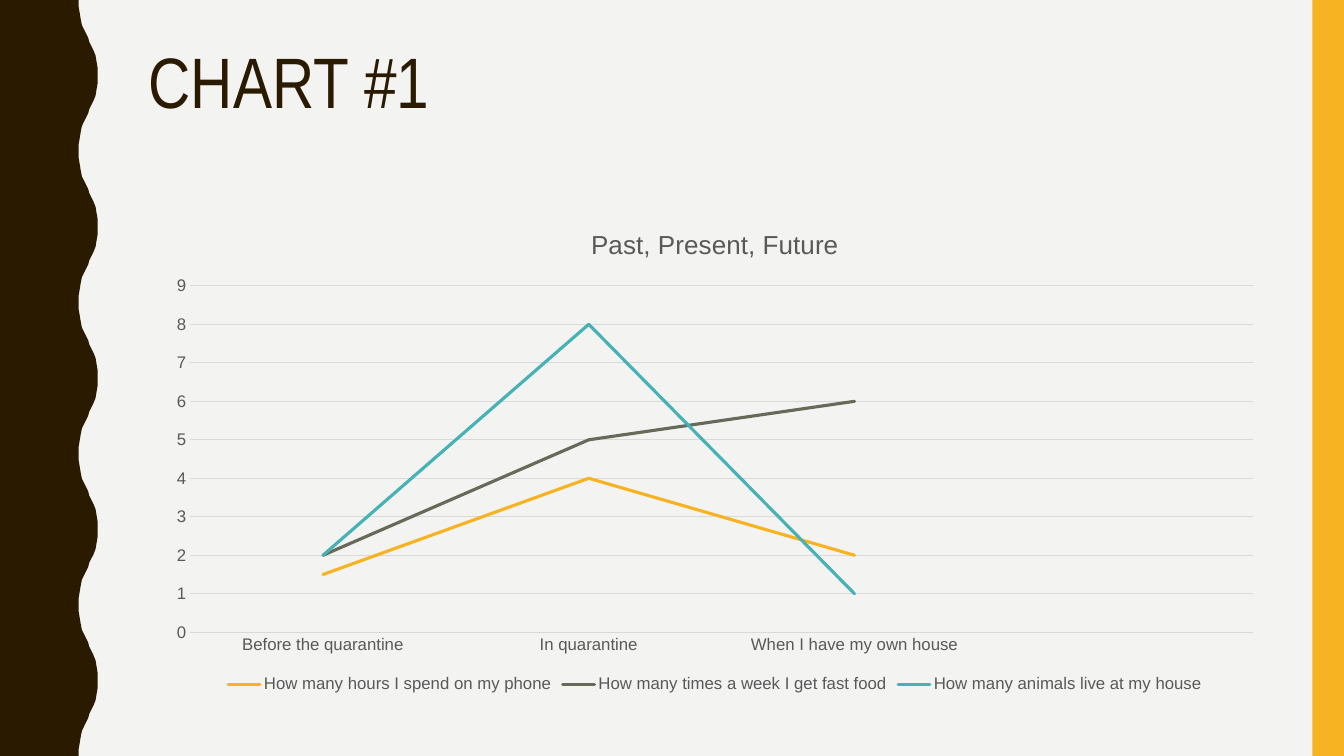
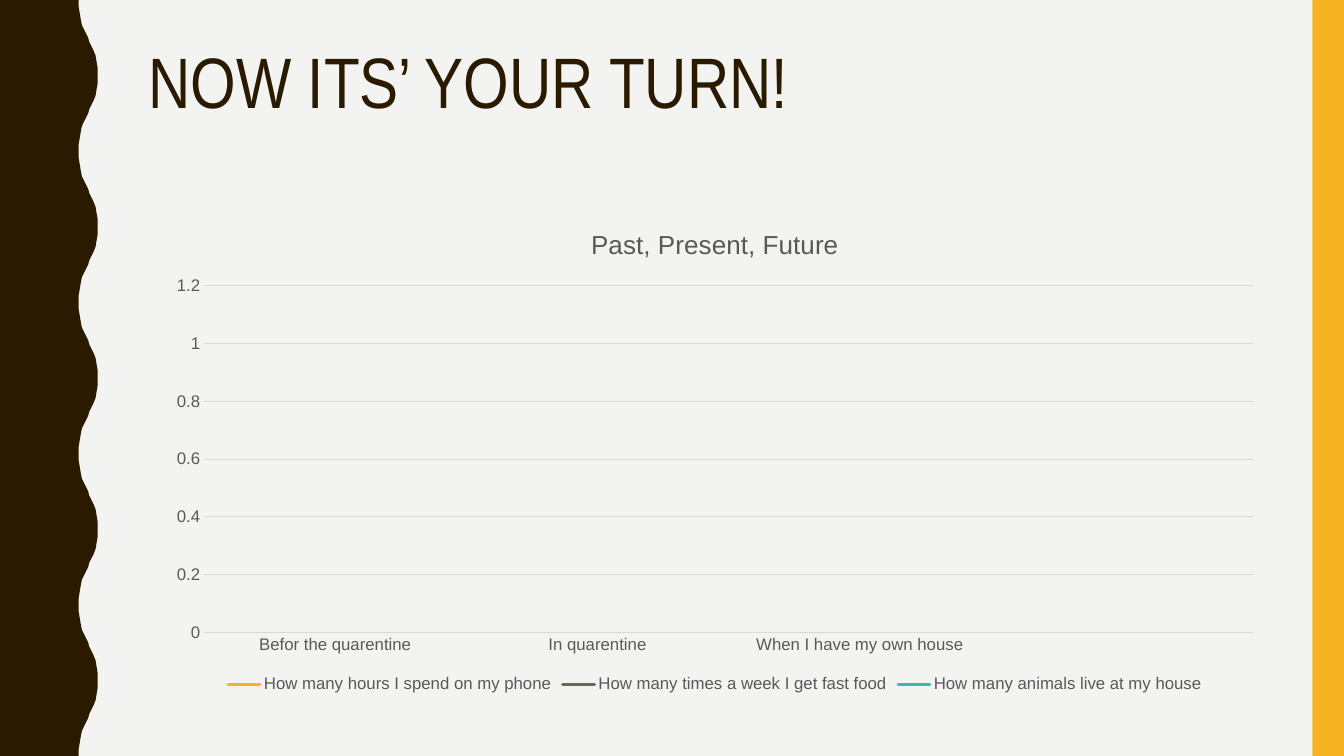
"""Build two line chart slides that share a wavy band, a side stripe and a title style."""
import dataclasses

import pptx
import pptx.chart.data
import pptx.dml.color
import pptx.enum.chart
import pptx.enum.shapes
import pptx.enum.text
import pptx.util

PX = 9525
WIDTH, HEIGHT = 1280, 720


@dataclasses.dataclass(frozen=True)
class Theme:
    paper: str = "F3F3F2"
    ink: str = "2A1A00"
    accent: str = "F8B323"
    label: str = "595959"
    grid: str = "D9D9D9"
    series: tuple = ("F8B323", "656A59", "46B2B5")
    title_font: str = "Arial Narrow"
    body_font: str = "Arial"
    title_size: float = 51
    chart_title_size: float = 18.6
    label_size: float = 12
    grid_width: float = 0.75
    series_width: float = 2.25


def rgb(color):
    return pptx.dml.color.RGBColor.from_string(color)


def style_font(font, name, size, color):
    font.name = name
    font.size = pptx.util.Pt(size)
    font.bold = False
    font.color.rgb = rgb(color)


def write(frame, text, *, font, size, color, align=None, line_spacing=None):
    frame.text = text
    paragraph = frame.paragraphs[0]
    paragraph.alignment = align
    paragraph.line_spacing = line_spacing
    style_font(paragraph.runs[0].font, font, size, color)


def wave_edge():
    xs = (75, 75, 76, 77, 78, 80, 82, 84, 85, 87, 89, 91, 92, 93, 93)
    ys = (0, 7, 13, 19, 24, 28, 32, 36, 40, 44, 48, 53, 59, 65, 72)
    crest = list(zip(xs, ys))
    period = crest + [(x, 144 - y) for x, y in crest[-2::-1]]
    return [(x, top + y) for top in range(0, HEIGHT, 144) for x, y in period]


class Deck:
    def __init__(self, theme):
        self.theme = theme
        self.presentation = pptx.Presentation()
        self.presentation.slide_width = WIDTH * PX
        self.presentation.slide_height = HEIGHT * PX
        self.layout = self.presentation.slide_layouts.get_by_name("Title Only")
        self.slide = None
        background = self.presentation.slide_master.background.fill
        background.solid()
        background.fore_color.rgb = rgb(theme.paper)

    def add_slide(self, title):
        first = self.slide is None
        self.slide = self.presentation.slides.add_slide(self.layout)
        if first:
            self.add_wave()
            self.add_stripe()
        self.add_title(title)

    def share(self, shape, color):
        shape.shadow.inherit = False
        shape.fill.solid()
        shape.fill.fore_color.rgb = rgb(color)
        shape.line.fill.background()
        self.layout.shapes.element.insert(2, shape.element)

    def add_wave(self):
        outline = self.slide.shapes.build_freeform(0, 0, scale=PX)
        outline.add_line_segments(wave_edge() + [(0, HEIGHT)], close=True)
        self.share(outline.convert_to_shape(), self.theme.ink)

    def add_stripe(self):
        stripe = self.slide.shapes.add_shape(
            pptx.enum.shapes.MSO_SHAPE.RECTANGLE, 1250 * PX, 0, 30 * PX, HEIGHT * PX)
        self.share(stripe, self.theme.accent)

    def add_title(self, text):
        title = self.slide.shapes.title
        title.left, title.top, title.width, title.height = (
            length * PX for length in (132, 40, 1068, 156))
        frame = title.text_frame
        frame.word_wrap = True
        frame.auto_size = pptx.enum.text.MSO_AUTO_SIZE.NONE
        frame.vertical_anchor = pptx.enum.text.MSO_ANCHOR.TOP
        write(frame, text, font=self.theme.title_font, size=self.theme.title_size,
              color=self.theme.ink, align=pptx.enum.text.PP_ALIGN.LEFT, line_spacing=0.9)

    def add_line_chart(self, title, categories, rows):
        theme = self.theme
        answers = pptx.chart.data.CategoryChartData()
        answers.categories = categories
        for question, values in rows.items():
            answers.add_series(question, values)
        chart = self.slide.shapes.add_chart(
            pptx.enum.chart.XL_CHART_TYPE.LINE,
            147 * PX, 197 * PX, 1068 * PX, 467 * PX, answers).chart
        style_font(chart.font, theme.body_font, theme.label_size, theme.label)
        chart.has_title = True
        write(chart.chart_title.text_frame, title, font=theme.body_font,
              size=theme.chart_title_size, color=theme.label)
        chart.has_legend = True
        chart.legend.position = pptx.enum.chart.XL_LEGEND_POSITION.BOTTOM
        chart.legend.include_in_layout = False
        style_font(chart.legend.font, theme.body_font, theme.label_size, theme.label)
        self.style_axes(chart)
        plot = chart.plots[0]
        plot.vary_by_categories = False
        for series, color in zip(plot.series, theme.series):
            series.smooth = False
            self.style_line(series.format.line, color, theme.series_width)
        for stroke in chart.element.xpath(".//c:ser/c:spPr/a:ln"):
            stroke.set("cap", "rnd")

    def style_axes(self, chart):
        theme = self.theme
        for axis in (chart.category_axis, chart.value_axis):
            axis.major_tick_mark = pptx.enum.chart.XL_TICK_MARK.NONE
            axis.minor_tick_mark = pptx.enum.chart.XL_TICK_MARK.NONE
            style_font(axis.tick_labels.font, theme.body_font, theme.label_size, theme.label)
        self.style_line(chart.category_axis.format.line, theme.grid, theme.grid_width)
        chart.value_axis.format.line.fill.background()
        chart.value_axis.has_major_gridlines = True
        self.style_line(chart.value_axis.major_gridlines.format.line,
                        theme.grid, theme.grid_width)

    def style_line(self, line, color, width):
        line.color.rgb = rgb(color)
        line.width = pptx.util.Pt(width)


def main():
    questions = (
        "How many hours I spend on my phone",
        "How many times a week I get fast food",
        "How many animals live at my house",
    )
    unanswered = (None,) * 4
    slides = (
        ("CHART #1",
         ("Before the quarantine", "In quarantine", "When I have my own house", ""),
         ((1.5, 4, 2, None), (2, 5, 6, None), (2, 8, 1, None))),
        ("NOW ITS’ YOUR TURN!",
         ("Befor the quarentine", "In quarentine", "When I have my own house", ""),
         (unanswered, unanswered, (None, None, 1, None))),
    )
    deck = Deck(Theme())
    for title, periods, answers in slides:
        deck.add_slide(title)
        deck.add_line_chart("Past, Present, Future", periods, dict(zip(questions, answers)))
    deck.presentation.save("out.pptx")


if __name__ == "__main__":
    main()
